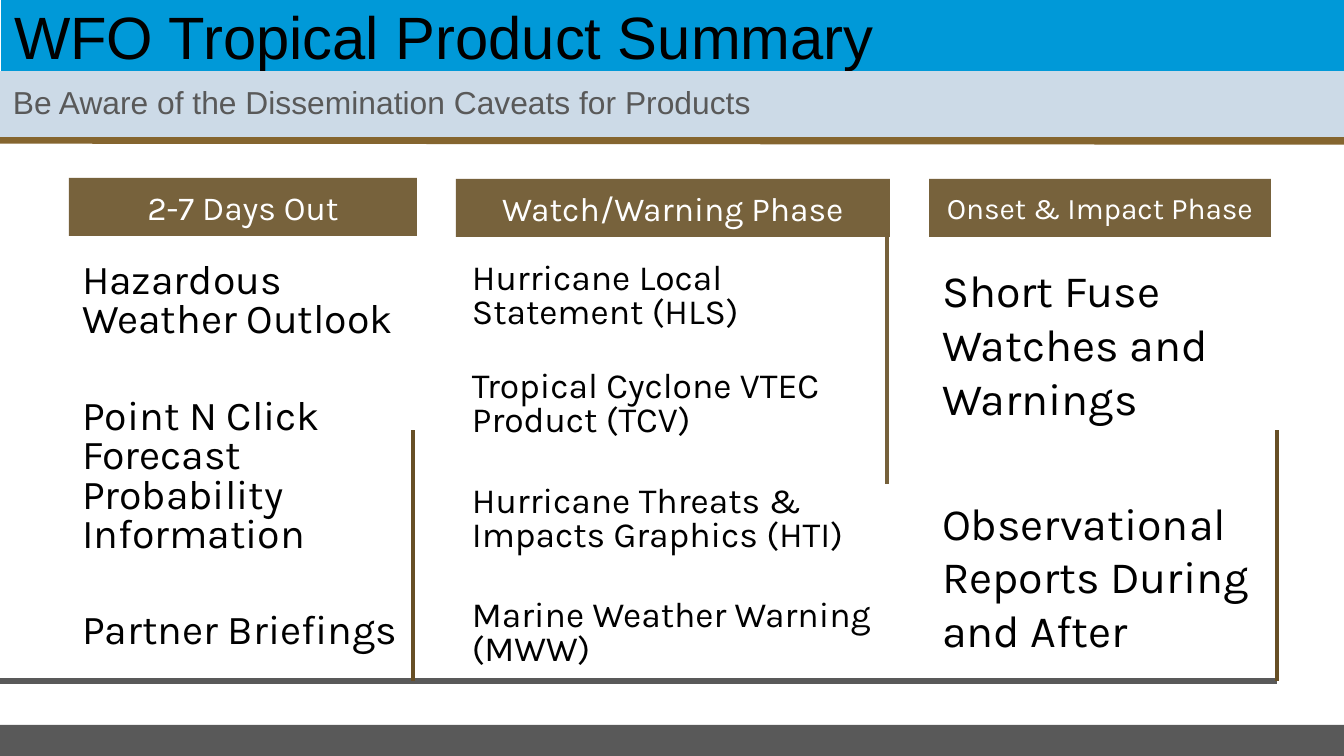
"""Build the tropical product summary slide with three phase columns."""
import pptx
import pptx.dml.color
import pptx.enum.shapes
import pptx.enum.text
import pptx.oxml
import pptx.oxml.ns
import pptx.util
from dataclasses import dataclass

WIDE, HIGH = 1344, 756
TITLE = "WFO Tropical Product Summary"
NOTE = "Be Aware of the Dissemination Caveats for Products"
PHASES = [
    dict(head="2-7 Days Out", box=(69, 178, 348), span=344, pad=13,
         size=22, lead=0.8, gaps=(0, 30.5, 30.5), cap=18,
         items=["Hazardous Weather Outlook",
                "Point N Click Forecast Probability Information",
                "Partner Briefings"]),
    dict(head="Watch/Warning Phase", box=(456, 179, 434), span=434, pad=16,
         size=19, lead=0.8, gaps=(0, 21.5, 25, 25), cap=18,
         items=["Hurricane Local Statement (HLS)",
                "Tropical Cyclone VTEC Product (TCV)",
                "Hurricane Threats & Impacts Graphics (HTI)",
                "Marine Weather Warning (MWW)"]),
    dict(head="Onset & Impact Phase", box=(929, 179, 342), span=348, pad=13,
         size=24, lead=1, gaps=(0, 38), cap=16,
         items=["Short Fuse Watches and Warnings",
                "Observational Reports During and After"]),
]


@dataclass(frozen=True)
class Theme:
    sans: str = "Arial"
    body: str = "Karla"
    black: str = "000000"
    white: str = "FFFFFF"
    gray: str = "595959"
    blue: str = "0099D8"
    pale: str = "CCDAE7"
    brown: str = "674F25"
    tan: str = "76613B"
    rule: str = "85652F"
    title: int = 32
    note: int = 17


THEME = Theme()
LINES = [
    (0, 681, 1277, 681, THEME.gray, 3),
    (1277, 681, 1277, 430, THEME.brown, 2),
    (887, 484, 887, 233, THEME.tan, 2),
    (413, 681, 413, 430, THEME.brown, 2),
]


def px(num):
    return pptx.util.Emu(round(num * 914400 / 134.4))


def tint(code):
    return pptx.dml.color.RGBColor.from_string(code)


def bar(slide, area, color, alpha=None):
    kind = pptx.enum.shapes.MSO_SHAPE.RECTANGLE
    shape = slide.shapes.add_shape(kind, *map(px, area))
    shape.shadow.inherit = False
    shape.line.fill.background()
    shape.fill.solid()
    shape.fill.fore_color.rgb = tint(color)
    if alpha:
        tone = shape.fill._xPr.find(".//" + pptx.oxml.ns.qn("a:srgbClr"))
        pptx.oxml.ns.qn("a:alpha")
        tone.append(pptx.oxml.parse_xml(
            f'<a:alpha {pptx.oxml.ns.nsdecls("a")} val="{alpha * 1000}"/>'))
    return shape


def rule(slide, x1, y1, x2, y2, color, width):
    kind = pptx.enum.shapes.MSO_CONNECTOR.STRAIGHT
    line = slide.shapes.add_connector(kind, *map(px, (x1, y1, x2, y2)))
    line.line.color.rgb = tint(color)
    line.line.width = pptx.util.Pt(width)
    line._element.spPr.append(pptx.oxml.parse_xml(
        f'<a:effectLst {pptx.oxml.ns.nsdecls("a")}/>'))


def write(shape, *texts, size, color, font=THEME.body, align="LEFT",
          anchor="MIDDLE", lead=1, gaps=(0,), left=13, edge=13):
    frame = shape.text_frame
    frame.word_wrap = True
    frame.vertical_anchor = pptx.enum.text.MSO_ANCHOR[anchor]
    frame.margin_left, frame.margin_right = px(left), px(13)
    frame.margin_top = frame.margin_bottom = px(edge)
    for i, (text, gap) in enumerate(zip(texts, gaps)):
        para = frame.add_paragraph() if i else frame.paragraphs[0]
        para.alignment = pptx.enum.text.PP_ALIGN[align]
        para.line_spacing = lead
        if gap:
            para.space_before = pptx.util.Pt(gap)
        run = para.add_run()
        run.text = text
        run.font.name = font
        run.font.size = pptx.util.Pt(size)
        run.font.color.rgb = tint(color)


def main():
    deck = pptx.Presentation()
    deck.slide_width, deck.slide_height = px(WIDE), px(HIGH)
    slide = deck.slides.add_slide(deck.slide_layouts[6])
    rule(slide, 0, 140, WIDE, 141, THEME.rule, 4)
    bar(slide, (0, 725, WIDE, 31), THEME.gray)
    write(bar(slide, (1, 0, WIDE - 1, 80), THEME.blue), TITLE,
          size=THEME.title, color=THEME.black, font=THEME.sans, lead=0.9)
    write(bar(slide, (0, 71, WIDE, 66), THEME.pale), NOTE, edge=7,
          size=THEME.note, color=THEME.gray, font=THEME.sans, lead=0.9)
    for phase in PHASES:
        x, y, width = phase["box"]
        area = (x, 250, phase["span"], 433)
        write(slide.shapes.add_textbox(*map(px, area)), *phase["items"],
              size=phase["size"], color=THEME.black, anchor="TOP",
              lead=phase["lead"], gaps=phase["gaps"], left=phase["pad"])
        write(bar(slide, (x, y, width, 58), THEME.brown, alpha=89),
              phase["head"], size=phase["cap"], color=THEME.white,
              align="CENTER")
    for line in LINES:
        rule(slide, *line)
    deck.save("out.pptx")


if __name__ == "__main__":
    main()
